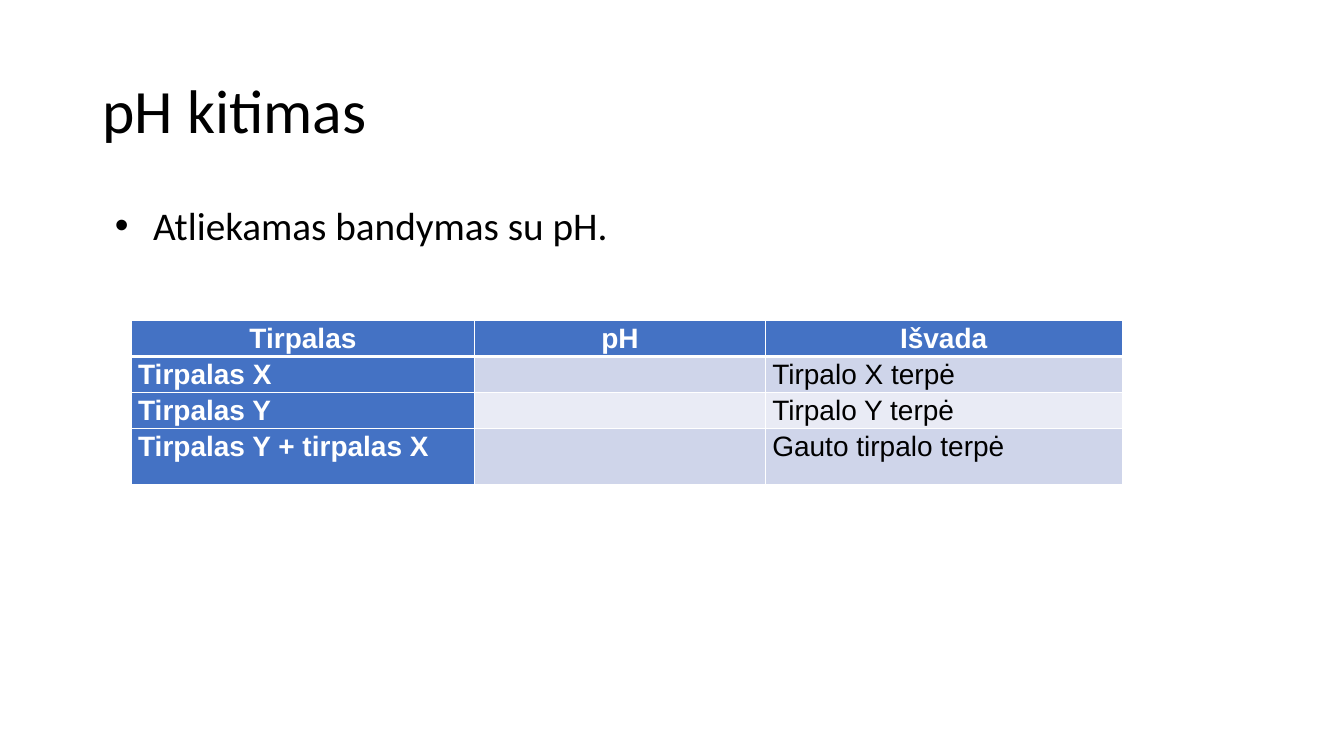
import pptx
import pptx.util
import pptx.dml.color
import pptx.enum.text
import pptx.oxml
import pptx.oxml.ns

Inches = pptx.util.Inches
Pt = pptx.util.Pt
RGBColor = pptx.dml.color.RGBColor
PP_ALIGN = pptx.enum.text.PP_ALIGN
MSO_ANCHOR = pptx.enum.text.MSO_ANCHOR

BLACK = RGBColor(0x00, 0x00, 0x00)
WHITE = RGBColor(0xFF, 0xFF, 0xFF)
BLUE = RGBColor(0x44, 0x72, 0xC4)
BAND_DARK = RGBColor(0xCF, 0xD5, 0xEA)
BAND_LIGHT = RGBColor(0xE9, 0xEB, 0xF5)
NAMESPACE = pptx.oxml.ns.nsdecls("a")


def add_run(para, text, font, size, color, bold=False):
    span = para.add_run()
    span.text = text
    span.font.name = font
    span.font.size = Pt(size)
    span.font.color.rgb = color
    span.font.bold = bold


def add_text(page, top, height, anchor, text, size):
    box = page.shapes.add_textbox(Inches(0.92), Inches(top), Inches(11.5), Inches(height))
    box.text_frame.word_wrap = True
    box.text_frame.vertical_anchor = anchor
    para = box.text_frame.paragraphs[0]
    para.line_spacing = 0.9
    add_run(para, text, "Calibri", size, BLACK)
    return para


deck = pptx.Presentation()
deck.slide_width = Inches(13.33)
deck.slide_height = Inches(7.5)
page = deck.slides.add_slide(deck.slide_layouts[6])

add_text(page, 0.4, 1.45, MSO_ANCHOR.MIDDLE, "pH kitimas", 44)

rows = [
    ("Tirpalas", "pH", "Išvada"),
    ("Tirpalas X", "", "Tirpalo X terpė"),
    ("Tirpalas Y", "", "Tirpalo Y terpė"),
    ("Tirpalas Y + tirpalas X", "", "Gauto tirpalo terpė"),
]
column_widths = [3.41, 2.88, 3.54]
row_heights = [0.27, 0.27, 0.27, 0.56]
table = page.shapes.add_table(
    len(rows), len(column_widths), Inches(1.3), Inches(3.18),
    Inches(sum(column_widths)), Inches(sum(row_heights)),
).table
for column, width in zip(table.columns, column_widths):
    column.width = Inches(width)

for row_index, texts in enumerate(rows):
    table.rows[row_index].height = Inches(row_heights[row_index])
    band = BAND_DARK if row_index % 2 else BAND_LIGHT
    for column_index, text in enumerate(texts):
        cell = table.cell(row_index, column_index)
        is_header = row_index == 0
        is_heading = is_header or column_index == 0
        cell.margin_left = cell.margin_right = Inches(0.07)
        cell.margin_top = cell.margin_bottom = 0
        cell.fill.solid()
        cell.fill.fore_color.rgb = BLUE if is_heading else band

        for position, side in enumerate("LRTB"):
            thick = (is_header and side == "B") or (row_index == 1 and side == "T")
            border = pptx.oxml.parse_xml(
                f'<a:ln{side} {NAMESPACE} w="{Pt(3 if thick else 1)}"><a:solidFill>'
                f'<a:srgbClr val="{WHITE}"/></a:solidFill></a:ln{side}>'
            )
            cell._tc.get_or_add_tcPr().insert(position, border)

        if text:
            para = cell.text_frame.paragraphs[0]
            para.line_spacing = 1.07
            para.alignment = PP_ALIGN.CENTER if is_header else PP_ALIGN.LEFT
            add_run(para, text, "Arial", 20, WHITE if is_heading else BLACK, is_heading)

bullet = add_text(page, 2, 1.44, MSO_ANCHOR.TOP, "Atliekamas bandymas su pH.", 28)
bullet.space_before = Pt(10)
properties = bullet._p.get_or_add_pPr()
properties.set("marL", str(Inches(0.5)))
properties.set("indent", str(Inches(-0.38)))
for markup in (
    f'<a:buClr {NAMESPACE}><a:srgbClr val="{BLACK}"/></a:buClr>',
    f'<a:buFont {NAMESPACE} typeface="Arial"/>',
    f'<a:buChar {NAMESPACE} char="•"/>',
):
    properties.append(pptx.oxml.parse_xml(markup))

deck.save("out.pptx")
